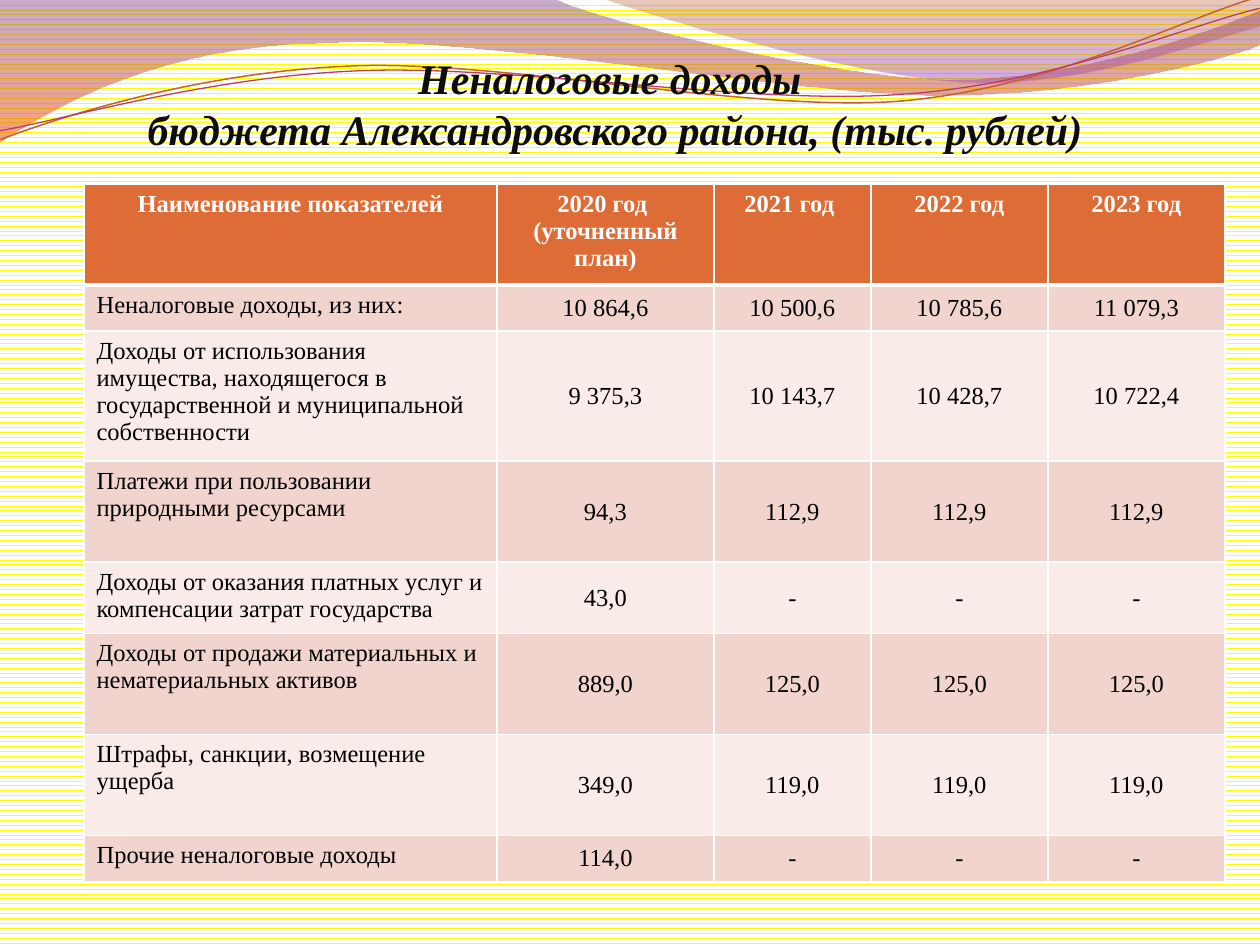
from lxml import etree
from pptx import Presentation
from pptx.dml.color import RGBColor
from pptx.enum.dml import MSO_PATTERN
from pptx.enum.text import MSO_ANCHOR, PP_ALIGN
from pptx.oxml.ns import qn
from pptx.util import Pt

PX = 914400 // 126
WAVE = MSO_PATTERN.WAVE
CENTER, LEFT = PP_ALIGN.CENTER, PP_ALIGN.LEFT
TOP, MIDDLE, BOTTOM = MSO_ANCHOR.TOP, MSO_ANCHOR.MIDDLE, MSO_ANCHOR.BOTTOM

WHITE = RGBColor(255, 255, 255)
BLACK = RGBColor(0, 0, 0)
YELLOW = RGBColor(255, 255, 0)
INK = RGBColor(0x0D, 0x0D, 0x0D)
ORANGE = RGBColor(0xDE, 0x6C, 0x36)
PINK = RGBColor(0xF2, 0xD4, 0xCE)
PALE = RGBColor(0xF9, 0xEB, 0xE8)
PLUM = RGBColor(0x83, 0x45, 0x91)
FLAME = RGBColor(0xF3, 0x53, 0x07)
RUST = RGBColor(0xB7, 0x49, 0x15)
VIOLET = RGBColor(0xA1, 0x4B, 0xB4)
COPPER = RGBColor(0xC4, 0x5F, 0x30)
BERRY = RGBColor(0xB8, 0x3D, 0x68)

# An outline is a list of steps: (x, y) is a straight step,
# (x1, y1, x2, y2, x, y) is a Bezier curve.
BAND = [(0, 0), (554, -1), (600, 21, 837, 79, 955, 79),
        (1075, 79, 1207, 33, 1260, 11), (1261, 45),
        (1238, 55, 1096, 96, 940, 95), (784, 95, 481, 35, 324, 43),
        (163, 45, 58, 105, -1, 142)]
CREST = [(604, -1), (641, 14, 859, 78, 969, 82),
         (1079, 87, 1211, 40, 1260, 26), (1260, 0)]
HIGH = [(-2, 110), (58, 90, 199, 52, 350, 53),
        (499, 53, 745, 118, 896, 114), (1049, 109, 1184, 45, 1260, 27)]
LOW = [(-2, 101), (57, 94, 207, 57, 357, 58),
       (509, 58, 750, 112, 902, 107), (1052, 104, 1188, 52, 1262, 38)]
TILT = 357.3

TITLE = ["Неналоговые доходы ", "бюджета Александровского района, (тыс. рублей)"]
COLS = [413, 217, 157, 177, 177]
ROWS = [101, 46, 130, 101, 71, 101, 101, 46]
DATA = [
    ["Наименование показателей", "2020 год \n(уточненный план)",
     "2021 год ", "2022 год", "2023 год"],
    ["Неналоговые доходы, из них:", "10 864,6", "10 500,6", "10 785,6", "11 079,3"],
    ["Доходы от использования имущества, находящегося в государственной "
     "и муниципальной собственности", "9 375,3", "10 143,7", "10 428,7", "10 722,4"],
    ["Платежи при пользовании природными ресурсами",
     "94,3", "112,9", "112,9", "112,9"],
    ["Доходы от оказания платных услуг и компенсации затрат государства",
     "43,0", "-", "-", "-"],
    ["Доходы от продажи материальных и нематериальных активов",
     "889,0", "125,0", "125,0", "125,0"],
    ["Штрафы, санкции, возмещение ущерба", "349,0", "119,0", "119,0", "119,0"],
    ["Прочие неналоговые доходы", "114,0", "-", "-", "-"],
]


def bend(shape, steps, left, top):
    """Turn the straight segments of curved steps into Bezier curves."""
    lines = list(shape._element.iter(qn("a:lnTo")))
    for line, step in zip(lines, steps[1:]):
        if len(step) == 6:
            line.tag = qn("a:cubicBezTo")
            curve = etree.Element(qn("a:cubicBezTo"))
            for x, y in zip(step[::2], step[1::2]):
                etree.SubElement(curve, qn("a:pt"), x=str(x - left), y=str(y - top))
            line.getparent().replace(line, curve)


class Painter:
    font = "Times New Roman"

    def __init__(self, slide):
        self.slide = slide
        self.shapes = slide.shapes

    def back(self, fore, ground):
        fill = self.slide.background.fill
        fill.patterned()
        fill.pattern = WAVE
        fill.fore_color.rgb = fore
        fill.back_color.rgb = ground

    def outline(self, steps, close):
        ends = [step[-2:] for step in steps]
        maker = self.shapes.build_freeform(*ends[0], scale=PX)
        maker.add_line_segments(ends[1:], close=close)
        shape = maker.convert_to_shape()
        bend(shape, steps, min(x for x, _ in ends), min(y for _, y in ends))
        shape.shadow.inherit = False
        return shape

    def wave(self, steps, stops):
        """Closed outline; each stop is (position, colour, opacity percent)."""
        shape = self.outline(steps, True)
        fill = shape.fill
        fill.gradient()
        fill.gradient_angle = 270
        for stop, (place, color, _) in zip(fill.gradient_stops, stops):
            stop.position = place
            stop.color.rgb = color
        tints = shape._element.spPr.iter(qn("a:srgbClr"))
        for tint, (_, _, alpha) in zip(tints, stops):
            etree.SubElement(tint, qn("a:alpha"), val=str(alpha * 1000))
        shape.line.fill.background()

    def curve(self, steps, color, width):
        shape = self.outline(steps, False)
        shape.rotation = TILT
        shape.fill.background()
        shape.line.color.rgb = color
        shape.line.width = Pt(width)

    def style(self, frame, size, color, align, bold=False, italic=False):
        for para in frame.paragraphs:
            para.alignment = align
            for run in para.runs:
                font = run.font
                font.name, font.size = self.font, Pt(size)
                font.bold, font.italic = bold, italic
                font.color.rgb = color

    def title(self, lines, *box):
        frame = self.shapes.add_textbox(*(n * PX for n in box)).text_frame
        frame.word_wrap = True
        frame.vertical_anchor = BOTTOM
        frame.text = "\n".join(lines)
        self.style(frame, 24, INK, CENTER, True, True)

    def border(self, cell, side, width):
        edge = etree.SubElement(cell._tc.get_or_add_tcPr(), qn("a:ln" + side),
                                w=str(Pt(width)))
        solid = etree.SubElement(edge, qn("a:solidFill"))
        etree.SubElement(solid, qn("a:srgbClr"), val=str(WHITE))

    def cell(self, cell, text, row, col):
        head = row == 0
        for side in "LRTB":
            thick = side == "B" and head or side == "T" and row == 1
            self.border(cell, side, 3 if thick else 1)
        cell.fill.solid()
        cell.fill.fore_color.rgb = ORANGE if head else PINK if row % 2 else PALE
        cell.vertical_anchor = MIDDLE if row and col else TOP
        cell.text_frame.text = text
        self.style(cell.text_frame, 14, WHITE if head else BLACK,
                   CENTER if head or col else LEFT, head)

    def table(self, data, left, top, cols, rows):
        size = (left, top, sum(cols), sum(rows))
        table = self.shapes.add_table(len(rows), len(cols),
                                      *(n * PX for n in size)).table
        for col, width in zip(table.columns, cols):
            col.width = width * PX
        for row, height in zip(table.rows, rows):
            row.height = height * PX
        for r, line in enumerate(data):
            for c, text in enumerate(line):
                self.cell(table.cell(r, c), text, r, c)


def main():
    deck = Presentation()
    deck.slide_width, deck.slide_height = 1260 * PX, 945 * PX
    art = Painter(deck.slides.add_slide(deck.slide_layouts[6]))
    art.back(YELLOW, WHITE)
    art.wave(BAND, [(0, PLUM, 45), (1, FLAME, 55)])
    art.wave(CREST, [(0, RUST, 30), (0.8, VIOLET, 45)])
    art.curve(HIGH, COPPER, 0.85)
    art.curve(LOW, BERRY, 0.75)
    art.title(TITLE, 35, 45, 1160, 115)
    art.table(DATA, 84, 184, COLS, ROWS)
    deck.save("out.pptx")


if __name__ == "__main__":
    main()
